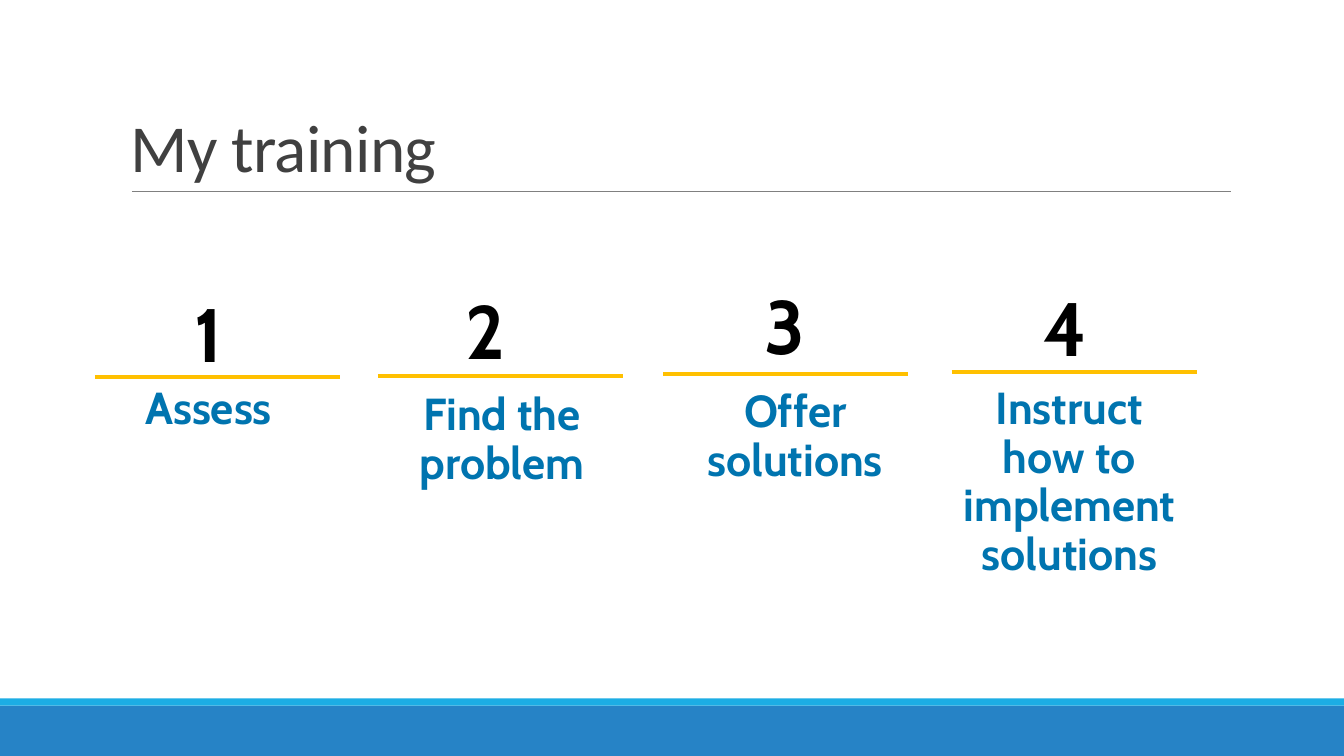
from lxml import etree
from pptx import Presentation
from pptx import util as u
from pptx.dml.color import RGBColor
from pptx.enum import shapes, text
from pptx.oxml.ns import qn

HEADING = "My training"
STEPS = [
    {"number": "1", "action": "Assess", "number_at": (55.4, 208.8),
     "action_at": (55.4, 272.2), "action_height": 42.5, "rule_at": (67.7, 269.3)},
    {"number": "2", "action": "Find the problem", "number_at": (253.4, 206.6),
     "action_at": (265, 276.5), "action_height": 77, "rule_at": (270, 268.6)},
    {"number": "3", "action": "Offer solutions", "number_at": (467.3, 203),
     "action_at": (474.5, 274.3), "action_height": 111, "rule_at": (473.8, 267.1)},
    {"number": "4", "action": "Instruct how to implement solutions", "number_at": (667.4, 204.5),
     "action_at": (670.3, 272.2), "action_height": 181, "rule_at": (679.7, 265.7)},
]

THEME = {
    "heading": {"font": "Calibri", "size": 48, "color": "404040", "bold": False},
    "number": {"font": "Cabin", "size": 54, "color": "000000", "bold": True},
    "action": {"font": "Cabin", "size": 32, "color": "0074AF", "bold": True},
    "footer": "2683C6",
    "footer_edge": "1CADE4",
    "heading_rule": "808080",
    "step_rule": "FFC000",
}

WIDTH, HEIGHT = 960, 540
FOOTER_TOP, EDGE_HEIGHT = 504, 5.2
STEP_WIDTH, NUMBER_HEIGHT, RULE_WIDTH = 187.2, 66.2, 175

deck = Presentation()
deck.slide_width, deck.slide_height = u.Pt(WIDTH), u.Pt(HEIGHT)
slide = deck.slides.add_slide(deck.slide_layouts[6])


def add_band(top, height, color):
    band = slide.shapes.add_shape(shapes.MSO_SHAPE.RECTANGLE, 0, u.Pt(top), u.Pt(WIDTH), u.Pt(height))
    band.shadow.inherit = False
    band.fill.solid()
    band.fill.fore_color.rgb = RGBColor.from_string(color)
    band.line.fill.background()


def add_rule(left, top, width, color, weight):
    rule = slide.shapes.add_connector(
        shapes.MSO_CONNECTOR.STRAIGHT, u.Pt(left), u.Pt(top), u.Pt(left + width), u.Pt(top))
    rule.line.color.rgb = RGBColor.from_string(color)
    rule.line.width = u.Pt(weight)
    etree.SubElement(rule._element.spPr, qn("a:effectLst"))


def add_words(words, left, top, width, height, style):
    frame = slide.shapes.add_textbox(u.Pt(left), u.Pt(top), u.Pt(width), u.Pt(height)).text_frame
    frame.word_wrap = True
    frame.text = words
    font = frame.paragraphs[0].runs[0].font
    font.name, font.size, font.bold = style["font"], u.Pt(style["size"]), style["bold"]
    font.color.rgb = RGBColor.from_string(style["color"])
    return frame


def add_step_words(words, corner, height, style):
    frame = add_words(words, *corner, STEP_WIDTH, height, style)
    frame.margin_left = frame.margin_right = u.Pt(11.5)
    frame.auto_size = text.MSO_AUTO_SIZE.SHAPE_TO_FIT_TEXT
    paragraph = frame.paragraphs[0]
    paragraph.alignment = text.PP_ALIGN.CENTER
    paragraph.line_spacing = 0.9
    paragraph.space_before = u.Pt(10)


add_band(FOOTER_TOP, HEIGHT - FOOTER_TOP, THEME["footer"])
add_band(FOOTER_TOP - EDGE_HEIGHT, EDGE_HEIGHT, THEME["footer_edge"])
add_rule(94.3, 136.8, 784.8, THEME["heading_rule"], 0.5)

for step in STEPS:
    add_step_words(step["number"], step["number_at"], NUMBER_HEIGHT, THEME["number"])
    add_step_words(step["action"], step["action_at"], step["action_height"], THEME["action"])
    add_rule(*step["rule_at"], RULE_WIDTH, THEME["step_rule"], 3)

heading = add_words(HEADING, 86.4, 22.6, 792, 114.2, THEME["heading"])
heading.vertical_anchor = text.MSO_ANCHOR.BOTTOM
heading.paragraphs[0].line_spacing = 0.85
heading.paragraphs[0].runs[0].font._element.set("spc", "-50")

deck.save("out.pptx")
